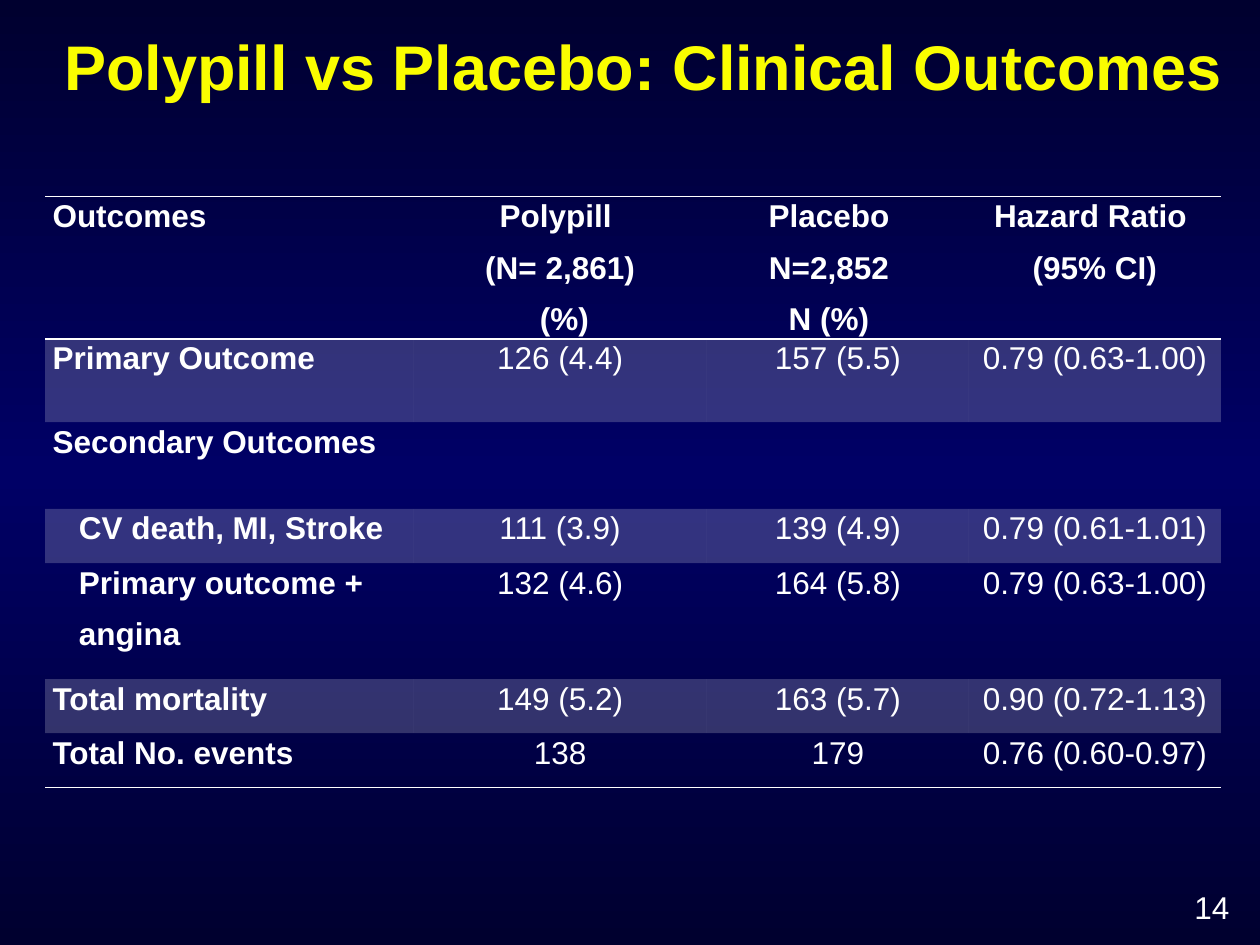
from copy import deepcopy
from dataclasses import dataclass

from lxml.etree import SubElement
from pptx import Presentation
from pptx.dml.color import RGBColor
from pptx.enum.text import MSO_ANCHOR, PP_ALIGN
from pptx.oxml.ns import qn
from pptx.util import Cm, Pt

WHITE = RGBColor(0xFF, 0xFF, 0xFF)
YELLOW = RGBColor(0xFA, 0xFD, 0x00)
NAVY = RGBColor(0x00, 0x00, 0x2F)
BLUE = RGBColor(0x00, 0x00, 0x66)
NO_STYLE = "{2D5ABB26-0587-4C30-8999-92F81FD0307C}"
COLS = (7.42, 5.92, 5.28, 5.08)


@dataclass(frozen=True)
class Row:
    height: float
    cells: tuple[str, ...]
    indent: float = 0
    band: bool = False
    rules: tuple[str, ...] = ()


ROWS = (
    Row(2.87, ("Outcomes", "Polypill \n(N= 2,861)\n (%)", "Placebo\nN=2,852\nN (%)",
               "Hazard Ratio \n(95% CI)"), rules=("a:lnT", "a:lnB")),
    Row(1.68, ("Primary Outcome", "126 (4.4)", "157 (5.5)", "0.79 (0.63-1.00)"), band=True),
    Row(1.75, ("Secondary Outcomes", "", "", "")),
    Row(1.09, ("CV death, MI, Stroke", "111 (3.9)", "139 (4.9)", "0.79 (0.61-1.01)"),
        indent=0.53, band=True),
    Row(2.34, ("Primary outcome +\nangina", "132 (4.6)", "164 (5.8)", "0.79 (0.63-1.00)"),
        indent=0.53),
    Row(1.09, ("Total mortality", "149 (5.2)", "163 (5.7)", "0.90 (0.72-1.13)"), band=True),
    Row(1.09, ("Total No. events", "138", "179", "0.76 (0.60-0.97)"), rules=("a:lnB",)),
)


def add_run(p, text: str, size: int = 18, color: RGBColor = WHITE, bold: bool = False) -> None:
    """Add one formatted run to a paragraph."""
    r = p.add_run()
    r.text = text
    r.font.name = "Arial"
    r.font.size = Pt(size)
    r.font.bold = bold
    r.font.color.rgb = color


def set_background(s) -> None:
    """Fill the slide with a navy gradient, lighter in the middle."""
    fill = s.background.fill
    fill.gradient()
    fill.gradient_angle = 270
    stops = s.background._cSld.find(".//" + qn("a:gsLst"))
    stops.insert(1, deepcopy(stops[0]))
    for stop, pos, color in zip(fill.gradient_stops, (0, 0.5, 1), (NAVY, BLUE, NAVY)):
        stop.position = pos
        stop.color.rgb = color


def add_rule(cell, side: str) -> None:
    """Draw a thin white border on one side of a cell."""
    ln = SubElement(cell._tc.get_or_add_tcPr(), qn(side), w=str(Pt(1)))
    SubElement(SubElement(ln, qn("a:solidFill")), qn("a:srgbClr"), val=str(WHITE))


def fill_cell(cell, row: Row, col: int, header: bool) -> None:
    """Write and format one table cell."""
    cell.margin_left = cell.margin_right = Cm(0.15)
    cell.margin_top = cell.margin_bottom = 0
    for side in row.rules:
        add_rule(cell, side)
    if row.band:
        cell.fill.solid()
        cell.fill.fore_color.rgb = WHITE
        color = cell._tc.tcPr.find(qn("a:solidFill")).find(qn("a:srgbClr"))
        SubElement(color, qn("a:alpha"), val="20000")
    else:
        cell.fill.background()
    if not row.cells[col]:
        return
    tf = cell.text_frame
    for i, line in enumerate(row.cells[col].split("\n")):
        p = tf.add_paragraph() if i else tf.paragraphs[0]
        p.alignment = PP_ALIGN.CENTER if col else PP_ALIGN.LEFT
        p.line_spacing = 1.07
        p.space_before = Pt(4 if i else 0)
        p.space_after = Pt(4)
        if col == 0 and row.indent:
            p._p.get_or_add_pPr().set("marL", str(Cm(row.indent)))
        if line == "Placebo":
            p._p.get_or_add_pPr().set("marR", str(Cm(0.36)))
        add_run(p, line, bold=header or col == 0)


def add_outcomes(s) -> None:
    """Add the outcomes table."""
    frame = s.shapes.add_table(len(ROWS), len(COLS), Cm(0.91), Cm(3.96),
                               Cm(sum(COLS)), Cm(sum(row.height for row in ROWS)))
    table = frame.table
    table.horz_banding = False
    next(frame._element.iter(qn("a:tableStyleId"))).text = NO_STYLE
    for column, width in zip(table.columns, COLS):
        column.width = Cm(width)
    for i, row in enumerate(ROWS):
        table.rows[i].height = Cm(row.height)
        for col in range(len(COLS)):
            fill_cell(table.cell(i, col), row, col, header=i == 0)


def main() -> None:
    """Build the clinical outcomes slide."""
    prs = Presentation()
    prs.slide_width, prs.slide_height = Cm(25.4), Cm(19.05)
    s = prs.slides.add_slide(prs.slide_layouts[5])
    set_background(s)

    title = s.shapes.title
    title.left, title.top, title.width, title.height = Cm(1.04), Cm(0.43), Cm(24.1), Cm(1.8)
    tf = title.text_frame
    tf.word_wrap = False
    tf.vertical_anchor = MSO_ANCHOR.TOP
    p = tf.paragraphs[0]
    p.alignment = PP_ALIGN.LEFT
    add_run(p, "Polypill vs Placebo: Clinical Outcomes", 36, YELLOW, True)

    add_outcomes(s)

    number = s.shapes.add_textbox(Cm(23.83), Cm(17.78), Cm(1.57), Cm(1.07))
    number.text_frame.word_wrap = True
    add_run(number.text_frame.paragraphs[0], "14")
    prs.save("out.pptx")


if __name__ == "__main__":
    main()
